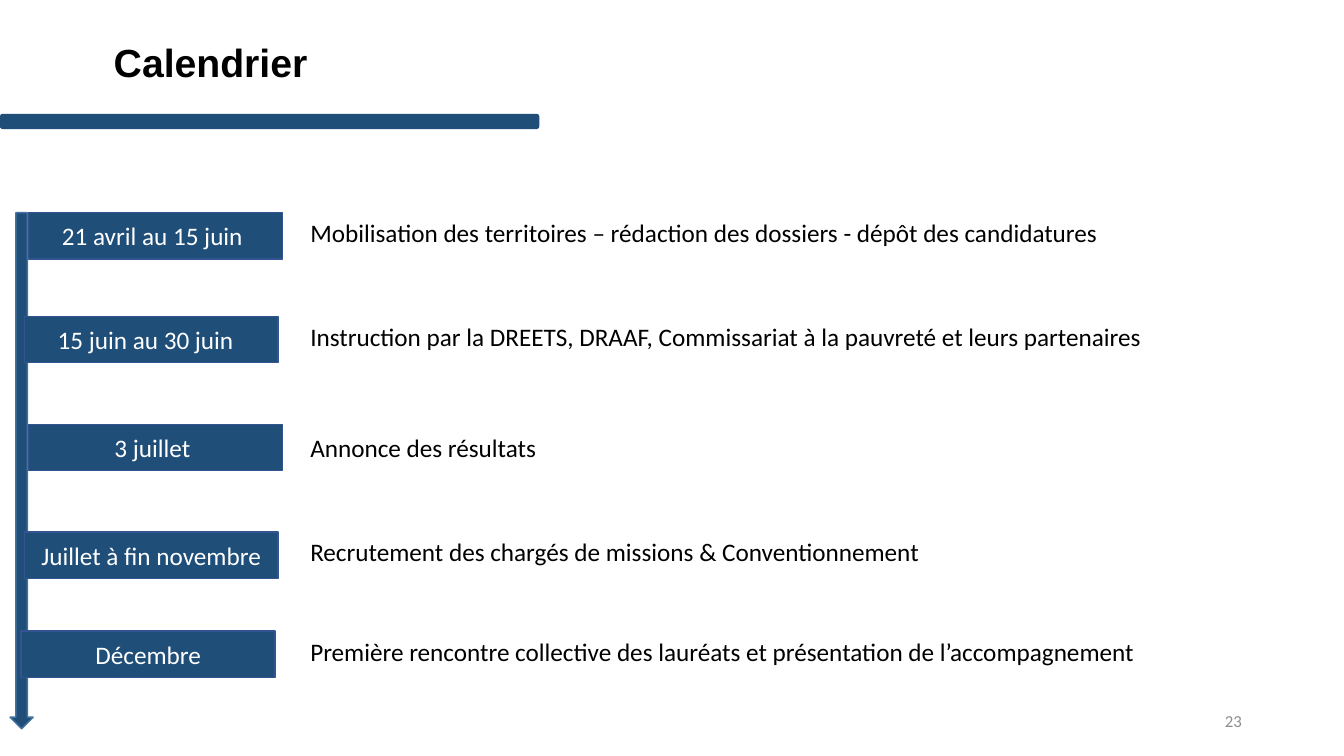
import pptx
import pptx.dml.color
import pptx.enum.shapes
import pptx.enum.text
import pptx.util

Pt = pptx.util.Pt
SHAPE = pptx.enum.shapes.MSO_SHAPE
ALIGN = pptx.enum.text.PP_ALIGN
ANCHOR = pptx.enum.text.MSO_ANCHOR

COLORS = {
    "navy": "1F4E79",
    "box_line": "325491",
    "arrow_line": "43739E",
    "black": "000000",
    "white": "FFFFFF",
    "gray": "8C8C8C",
}

DATE_WIDTH, DATE_HEIGHT = 181.44, 33.12
LABEL_LEFT, LABEL_WIDTH = 214.56, 622.08

# date, right inset, date left, date top, description, description top, description height
MILESTONES = [
    ("21 avril au 15 juin", 11.2, 20.16, 151.92,
     "Mobilisation des territoires – rédaction des dossiers - dépôt des candidatures", 151.92, 51.12),
    ("15 juin au 30 juin", 15.2, 17.28, 226.08,
     "Instruction par la DREETS, DRAAF, Commissariat à la pauvreté et leurs partenaires", 226.08, 51.12),
    ("3 juillet", 11.2, 20.16, 303.12,
     "Annonce des résultats", 305.28, 28.8),
    ("Juillet à fin novembre", 7.2, 17.28, 380.16,
     "Recrutement des chargés de missions & Conventionnement", 379.44, 28.8),
    ("Décembre", 7.2, 15.12, 450.72,
     "Première rencontre collective des lauréats et présentation de l’accompagnement", 450.72, 28.8),
]


def color(name):
    return pptx.dml.color.RGBColor.from_string(COLORS[name])


def write(shape, text, size, color_name, font="Calibri", bold=False,
          align=ALIGN.LEFT, anchor=ANCHOR.TOP):
    frame = shape.text_frame
    frame.word_wrap = True
    frame.vertical_anchor = anchor
    paragraph = frame.paragraphs[0]
    paragraph.alignment = align
    run = paragraph.add_run()
    run.text = text
    run.font.name = font
    run.font.size = Pt(size)
    run.font.bold = bold
    run.font.color.rgb = color(color_name)


def add_text(slide, box, text, size, color_name, **style):
    shape = slide.shapes.add_textbox(*map(Pt, box))
    write(shape, text, size, color_name, **style)


def add_block(slide, kind, box, line=None):
    shape = slide.shapes.add_shape(kind, *map(Pt, box))
    shape.shadow.inherit = False
    shape.fill.solid()
    shape.fill.fore_color.rgb = color("navy")
    if line:
        shape.line.color.rgb = color(line)
        shape.line.width = Pt(1)
    else:
        shape.line.fill.background()
    return shape


def add_milestone(slide, date, right_inset, left, top, description, label_top, label_height):
    block = add_block(slide, SHAPE.RECTANGLE, (left, top, DATE_WIDTH, DATE_HEIGHT), "box_line")
    write(block, date, 18, "white", align=ALIGN.CENTER, anchor=ANCHOR.MIDDLE)
    block.text_frame.margin_right = Pt(right_inset)
    add_text(slide, (LABEL_LEFT, label_top, LABEL_WIDTH, label_height), description, 18, "black")


def main():
    presentation = pptx.Presentation()
    presentation.slide_width = Pt(960)
    presentation.slide_height = Pt(540)
    slide = presentation.slides.add_slide(presentation.slide_layouts[6])

    add_block(slide, SHAPE.ROUNDED_RECTANGLE, (0, 81.36, 385.2, 10.8))
    add_text(slide, (74.16, 23.76, 372.96, 41.04), "Calendrier", 28, "black",
             font="Arial", bold=True)

    add_milestone(slide, *MILESTONES[0])
    add_block(slide, SHAPE.DOWN_ARROW, (7.2, 151.92, 16.56, 368.64), "arrow_line")
    for milestone in MILESTONES[1:]:
        add_milestone(slide, *milestone)

    add_text(slide, (678.24, 500.4, 216, 28.8), "23", 12, "gray",
             align=ALIGN.RIGHT, anchor=ANCHOR.MIDDLE)
    presentation.save("out.pptx")


if __name__ == "__main__":
    main()
